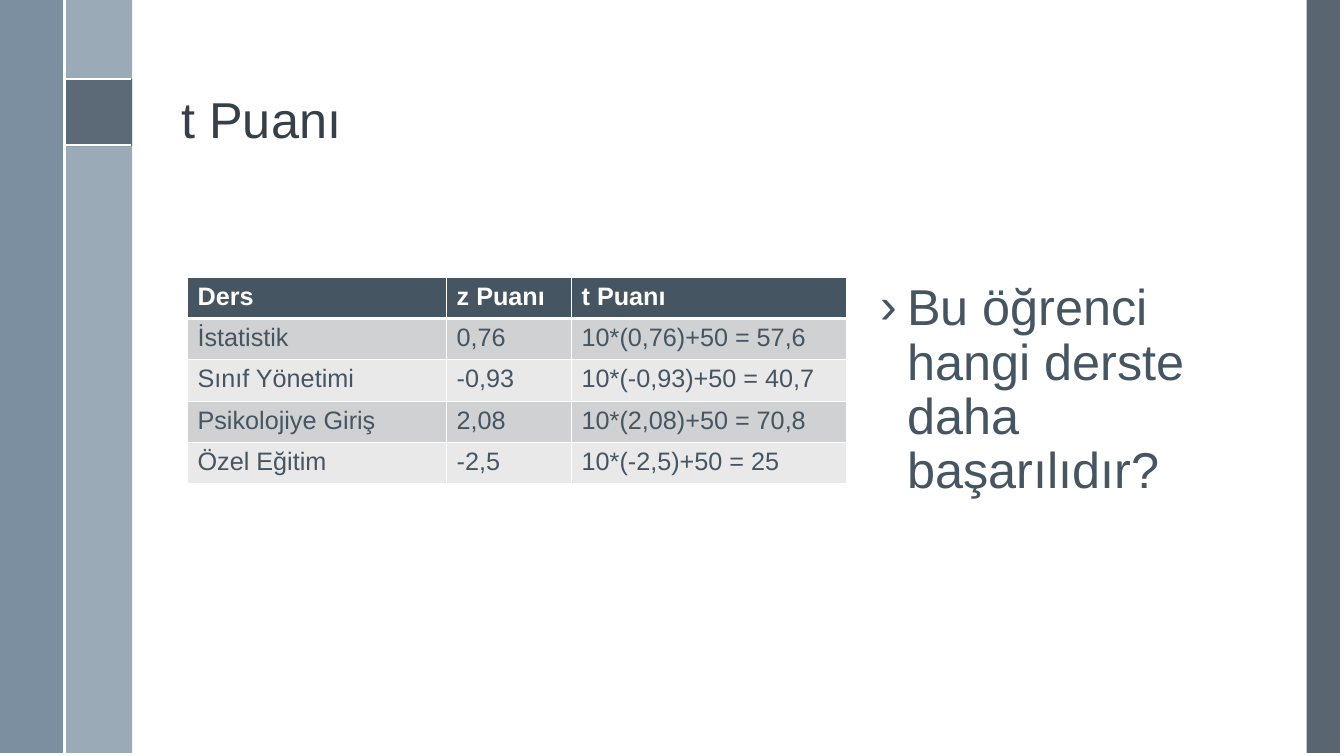
import pptx
import pptx.dml.color
import pptx.enum.shapes
import pptx.enum.text
import pptx.oxml.ns
import pptx.util
from lxml import etree

Inches = pptx.util.Inches
Pt = pptx.util.Pt
RGBColor = pptx.dml.color.RGBColor
qn = pptx.oxml.ns.qn

WHITE = RGBColor(0xFF, 0xFF, 0xFF)
SLATE = RGBColor(0x46, 0x55, 0x62)
TITLE_COLOR = RGBColor(0x35, 0x40, 0x4A)
DARK_BAR = RGBColor(0x47, 0x55, 0x62)
BLUE_BAR = RGBColor(0x6A, 0x80, 0x93)
LIGHT_BAR = RGBColor(0x9B, 0xAA, 0xB7)
ROW_DARK = RGBColor(0xCF, 0xD1, 0xD3)
ROW_LIGHT = RGBColor(0xE9, 0xE9, 0xEA)


def write_text(frame, text, size=18, color=SLATE, bold=False, line_spacing=None):
    frame.word_wrap = True
    paragraph = frame.paragraphs[0]
    if line_spacing:
        paragraph.line_spacing = line_spacing
    run = paragraph.add_run()
    run.text = text
    run.font.name = "Arial"
    run.font.size = Pt(size)
    run.font.bold = bold
    run.font.color.rgb = color
    return paragraph


presentation = pptx.Presentation()
presentation.slide_width = Inches(13.33)
presentation.slide_height = Inches(7.5)
slide = presentation.slides.add_slide(presentation.slide_layouts[5])

# Side bars and the square behind the pi sign: left, top, width, height, color, opacity
bars = [
    (12.96, -0.03, 0.33, 7.5, DARK_BAR, 90),
    (0.64, -0.03, 0.67, 7.5, LIGHT_BAR, 100),
    (-0.04, -0.03, 0.67, 7.5, BLUE_BAR, 88),
    (0.64, 0.78, 0.67, 0.67, DARK_BAR, 75),
]
for left, top, width, height, color, opacity in bars:
    bar = slide.shapes.add_shape(
        pptx.enum.shapes.MSO_SHAPE.RECTANGLE,
        Inches(left), Inches(top), Inches(width), Inches(height))
    bar.shadow.inherit = False
    bar.fill.solid()
    bar.fill.fore_color.rgb = color
    bar.line.fill.background()
    if opacity < 100:
        color_element = bar.fill._xPr.find(".//" + qn("a:srgbClr"))
        etree.SubElement(color_element, qn("a:alpha"), val=str(opacity * 1000))

# White rules
rules = [(0.64, 0.78, 1.3, 0.78), (0.64, 1.44, 1.3, 1.44), (0.64, -0.03, 0.64, 7.47)]
for rule in rules:
    line = slide.shapes.add_connector(
        pptx.enum.shapes.MSO_CONNECTOR.STRAIGHT, *[Inches(value) for value in rule])
    line.line.color.rgb = WHITE
    line.line.width = Pt(1.5)
    etree.SubElement(line._element.spPr, qn("a:effectLst"))

# Pi sign
pi_points = [
    (1.14, 0.95), (0.86, 0.95), (0.82, 0.97), (0.79, 1.01), (0.8, 1.03),
    (0.81, 1.02), (0.83, 0.99), (0.86, 0.98), (0.9, 0.98), (0.89, 1.11),
    (0.87, 1.19), (0.84, 1.24), (0.84, 1.26), (0.86, 1.26), (0.89, 1.2),
    (0.92, 1.1), (0.93, 0.98), (1.02, 0.98), (1.01, 1.19), (1.01, 1.23),
    (1.03, 1.26), (1.07, 1.28), (1.11, 1.26), (1.14, 1.23), (1.15, 1.2),
    (1.14, 1.18), (1.12, 1.19), (1.1, 1.23), (1.07, 1.25), (1.04, 1.24),
    (1.03, 1.19), (1.05, 0.98), (1.14, 0.98), (1.15, 0.97),
]
builder = slide.shapes.build_freeform(*pi_points[0], scale=Inches(1))
builder.add_line_segments(pi_points[1:], close=True)
pi_sign = builder.convert_to_shape()
pi_sign.shadow.inherit = False
pi_sign.fill.solid()
pi_sign.fill.fore_color.rgb = WHITE
pi_sign.line.fill.background()

# Title
title = slide.shapes.title
title.left, title.top = Inches(1.7), Inches(0.17)
title.width, title.height = Inches(10.7), Inches(1.36)
title.text_frame.vertical_anchor = pptx.enum.text.MSO_ANCHOR.BOTTOM
paragraph = write_text(title.text_frame, "t Puanı", size=36, color=TITLE_COLOR, line_spacing=0.9)
paragraph.alignment = pptx.enum.text.PP_ALIGN.LEFT

# Score table
scores = [
    ("Ders", "z Puanı", "t Puanı"),
    ("İstatistik", "0,76", "10*(0,76)+50 = 57,6"),
    ("Sınıf Yönetimi", "-0,93", "10*(-0,93)+50 = 40,7"),
    ("Psikolojiye Giriş", "2,08", "10*(2,08)+50 = 70,8"),
    ("Özel Eğitim", "-2,5", "10*(-2,5)+50 = 25"),
]
table = slide.shapes.add_table(
    len(scores), 3, Inches(1.86), Inches(2.75), Inches(6.54), Inches(2.03)).table
for column, width in zip(table.columns, (2.57, 1.24, 2.73)):
    column.width = Inches(width)
for row_index, row in enumerate(scores):
    table.rows[row_index].height = Inches(0.41)
    header = row_index == 0
    for column_index, text in enumerate(row):
        cell = table.cell(row_index, column_index)
        write_text(cell.text_frame, text, color=WHITE if header else SLATE, bold=header)
        properties = cell._tc.get_or_add_tcPr()
        for side in "LRTB":
            thick = (header and side == "B") or (row_index == 1 and side == "T")
            border = etree.SubElement(
                properties, qn("a:ln" + side), w=str(Pt(3 if thick else 1)))
            border_fill = etree.SubElement(border, qn("a:solidFill"))
            etree.SubElement(border_fill, qn("a:srgbClr"), val=str(WHITE))
        cell.fill.solid()
        cell.fill.fore_color.rgb = SLATE if header else ROW_DARK if row_index % 2 else ROW_LIGHT

# Question
question = slide.shapes.add_textbox(Inches(8.63), Inches(2.75), Inches(3.81), Inches(4))
paragraph = write_text(
    question.text_frame, "Bu öğrenci hangi derste daha başarılıdır?", size=36, line_spacing=0.9)
paragraph.space_before = Pt(14)
bullet_properties = paragraph._p.get_or_add_pPr()
bullet_properties.set("marL", str(Inches(0.27)))
bullet_properties.set("indent", str(Inches(-0.27)))
etree.SubElement(bullet_properties, qn("a:buFont"), typeface="Arial")
etree.SubElement(bullet_properties, qn("a:buChar"), char="›")

presentation.save("out.pptx")
